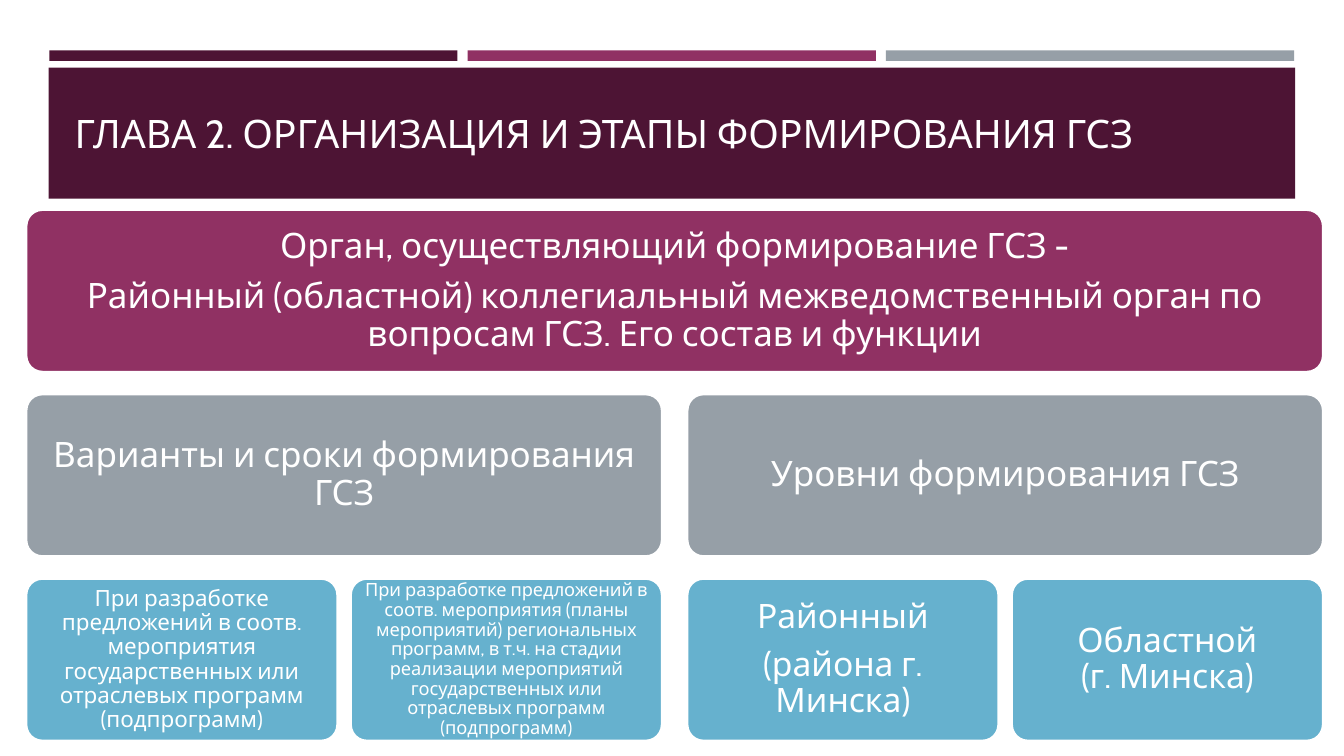
"""Build the slide on how the state social order (ГСЗ) is organised and formed."""
from pptx import Presentation
from pptx import util as u
from pptx.dml.color import RGBColor
from pptx.enum import shapes, text

FONT = "Cabin"
COLORS = {"dark": "4D1434", "plum": "903163", "grey": "969FA7", "blue": "66B1CE", "white": "FFFFFF"}
TITLE = "ГЛАВА 2. ОРГАНИЗАЦИЯ И ЭТАПЫ ФОРМИРОВАНИЯ ГСЗ"
STRIPES = ["dark", "plum", "grey"]

ROWS = [
    ("plum", 4, [
        (25, 7.2, ["Орган, осуществляющий формирование ГСЗ -",
                   "Районный (областной) коллегиальный межведомственный орган по вопросам ГСЗ. "
                   "Его состав и функции"]),
    ]),
    ("grey", 2, [
        (25, 7.2, ["Варианты и сроки формирования ГСЗ"]),
        (25, 7.2, ["Уровни формирования ГСЗ"]),
    ]),
    ("blue", 1, [
        (16, 4.8, ["При разработке предложений в соотв. мероприятия государственных или "
                   "отраслевых программ (подпрограмм)"]),
        (13, 3.6, ["При разработке предложений в соотв. мероприятия (планы мероприятий) "
                   "региональных программ, в т.ч. на стадии реализации мероприятий "
                   "государственных или отраслевых программ (подпрограмм)"]),
        (24, 7.2, ["Районный", "(района г. Минска)"]),
        (24, 7.2, ["Областной\v(г. Минска)"]),
    ]),
]

LEFT, TOP = 18.7, 149.8
CELL_WIDTH, CELL_HEIGHT = 222.4, 115.9
CELL_GAP, PAIR_GAP, ROW_STEP = 9.4, 18, 131.75
STRIPE_LEFT, STRIPE_WIDTH, STRIPE_STEP = 35.2, 291.6, 298.8


def color(name):
    return RGBColor.from_string(COLORS[name])


def add_block(slide, kind, box, fill):
    block = slide.shapes.add_shape(kind, *(u.Pt(value) for value in box))
    block.shadow.inherit = False
    block.fill.solid()
    block.fill.fore_color.rgb = color(fill)
    block.line.fill.background()
    return block


def format_runs(paragraph, size):
    for run in paragraph.runs:
        run.font.name = FONT
        run.font.size = u.Pt(size)
        run.font.color.rgb = color("white")


def add_header(slide):
    rectangle = shapes.MSO_SHAPE.RECTANGLE
    for index, fill in enumerate(STRIPES):
        add_block(slide, rectangle, (STRIPE_LEFT + index * STRIPE_STEP, 36, STRIPE_WIDTH, 7.5), fill)
    band = add_block(slide, rectangle, (34.8, 48.4, 890.3, 93.6), "dark")

    title = slide.shapes.title
    title.left, title.top, title.width, title.height = (u.Pt(v) for v in (46.1, 55.4, 868.3, 59.8))
    band.element.addnext(title.element)
    frame = title.text_frame
    frame.text = TITLE
    frame.word_wrap = True
    frame.auto_size = text.MSO_AUTO_SIZE.NONE
    frame.vertical_anchor = text.MSO_ANCHOR.BOTTOM
    frame.paragraphs[0].alignment = text.PP_ALIGN.LEFT
    format_runs(frame.paragraphs[0], 28)


def cell_left(column):
    pair, place = divmod(column, 2)
    return LEFT + column * CELL_WIDTH + (pair + place) * CELL_GAP + pair * PAIR_GAP


def add_card(slide, box, fill, size, inset, lines):
    card = add_block(slide, shapes.MSO_SHAPE.ROUNDED_RECTANGLE, box, fill)
    card.adjustments[0] = 0.1
    card.line.color.rgb = color("white")
    card.line.width = u.Pt(1.75)
    frame = card.text_frame
    frame.word_wrap = True
    frame.vertical_anchor = text.MSO_ANCHOR.MIDDLE
    frame.margin_left = frame.margin_right = frame.margin_top = frame.margin_bottom = u.Pt(inset)
    frame.text = "\n".join([""] * len(lines))
    for paragraph, line in zip(frame.paragraphs, lines):
        paragraph.text = line
        paragraph.alignment = text.PP_ALIGN.CENTER
        paragraph.line_spacing = 0.9
        paragraph.space_after = u.Pt(round(size * 0.36, 1))
        format_runs(paragraph, size)


def main():
    presentation = Presentation()
    presentation.slide_width, presentation.slide_height = u.Pt(960), u.Pt(540)
    slide = presentation.slides.add_slide(presentation.slide_layouts[5])
    add_header(slide)
    for row, (fill, span, cards) in enumerate(ROWS):
        for index, (size, inset, lines) in enumerate(cards):
            left = cell_left(index * span)
            width = cell_left(index * span + span - 1) + CELL_WIDTH - left
            box = (left, TOP + row * ROW_STEP, width, CELL_HEIGHT)
            add_card(slide, box, fill, size, inset, lines)
    presentation.save("out.pptx")


if __name__ == "__main__":
    main()
